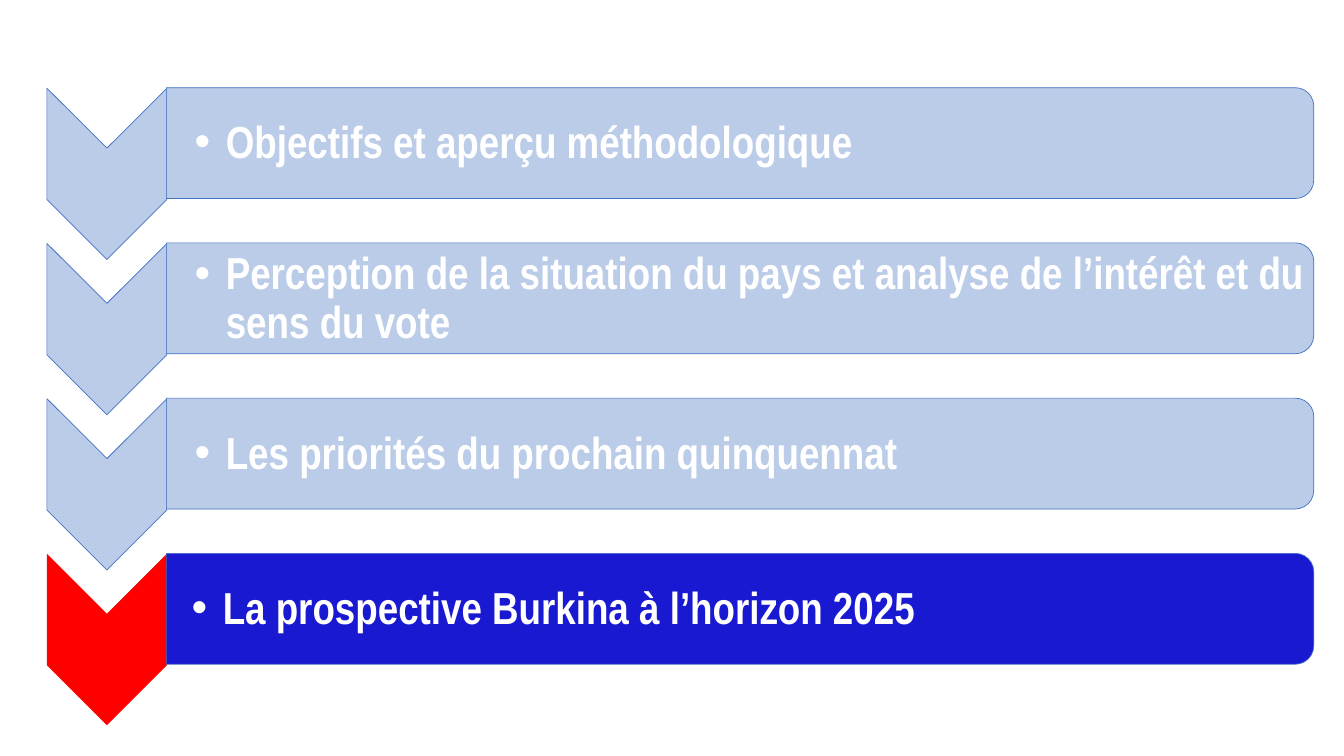
from dataclasses import dataclass

import pptx
import pptx.dml.color
import pptx.enum.shapes
import pptx.enum.text
import pptx.oxml
import pptx.oxml.ns
import pptx.util
from lxml import etree
from pptx.util import Inches

COLORS = {
    "muted": "B4C7E7",
    "outline": "4472C4",
    "active_arrow": "FF0000",
    "active_bar": "0000CC",
    "text": "FFFFFF",
}
PRESETS = pptx.enum.shapes.MSO_SHAPE
FIRST_TOP, PITCH = 1.13, 1.54
INDENT = 0.31


@dataclass(frozen=True)
class Section:
    heading: str
    arrow: str = "muted"
    bar: str = "muted"
    left_inset: float = 0.28
    inset: float = 0.03


SECTIONS = [
    Section("Objectifs et aperçu méthodologique"),
    Section("Perception de la situation du pays et analyse de l’intérêt et du sens du vote"),
    Section("Les priorités du prochain quinquennat"),
    Section("La prospective Burkina à l’horizon 2025", "active_arrow", "active_bar", 0.25, 0.02),
]


def rgb(key: str) -> pptx.dml.color.RGBColor:
    return pptx.dml.color.RGBColor.from_string(COLORS[key])


def apply_format(target: object, values: dict[str, object]) -> None:
    for attribute, value in values.items():
        setattr(target, attribute, value)


def add_turned_shape(slide: pptx.slide.Slide, preset: PRESETS, left: float, top: float,
                     width: float, height: float, color: str) -> None:
    shape = slide.shapes.add_shape(preset, Inches(left), Inches(top), Inches(width), Inches(height))
    shape.rotation = 90
    shape.shadow.inherit = False
    shape.fill.solid()
    shape.fill.fore_color.rgb = rgb(color)
    if color == "active_arrow":
        shape.line.fill.background()
        return
    shape.line.color.rgb = rgb("outline")
    shape.line.width = pptx.util.Pt(0.5)
    fill_color = shape.fill._xPr.find(".//" + pptx.oxml.ns.qn("a:srgbClr"))
    etree.SubElement(fill_color, pptx.oxml.ns.qn("a:alpha"), val="90000")


def add_heading(slide: pptx.slide.Slide, section: Section, top: float) -> None:
    box = slide.shapes.add_textbox(Inches(1.65), Inches(top), Inches(11.33), Inches(1))
    frame = box.text_frame
    apply_format(frame, {
        "word_wrap": True,
        "vertical_anchor": pptx.enum.text.MSO_ANCHOR.MIDDLE,
        "margin_left": Inches(section.left_inset),
        "margin_top": Inches(section.inset),
        "margin_right": Inches(section.inset),
        "margin_bottom": Inches(section.inset),
    })
    paragraph = frame.paragraphs[0]
    apply_format(paragraph, {"level": 1, "line_spacing": 0.9, "space_after": pptx.util.Pt(4.8)})
    properties = paragraph._p.get_or_add_pPr()
    properties.set("marL", str(Inches(INDENT)))
    properties.set("indent", str(-Inches(INDENT)))
    etree.SubElement(properties, pptx.oxml.ns.qn("a:buFont"), typeface="Arial")
    etree.SubElement(properties, pptx.oxml.ns.qn("a:buChar"), char="•")
    heading = paragraph.add_run()
    heading.text = section.heading
    apply_format(heading.font, {"name": "Arial Narrow", "size": pptx.util.Pt(32), "bold": True})
    heading.font.color.rgb = rgb("text")


def main() -> None:
    deck = pptx.Presentation()
    apply_format(deck, {"slide_width": Inches(13.33), "slide_height": Inches(7.5)})
    agenda = deck.slides.add_slide(deck.slide_layouts[6])
    for position, section in enumerate(SECTIONS):
        top = FIRST_TOP + position * PITCH
        add_turned_shape(agenda, PRESETS.CHEVRON, 0.21, top, 1.7, 1.19, section.arrow)
        add_turned_shape(agenda, PRESETS.ROUND_2_SAME_RECTANGLE, 6.79, top - 5.4, 1.1, 11.38,
                         section.bar)
        add_heading(agenda, section, top - 0.2)
    deck.save("out.pptx")


if __name__ == "__main__":
    main()
